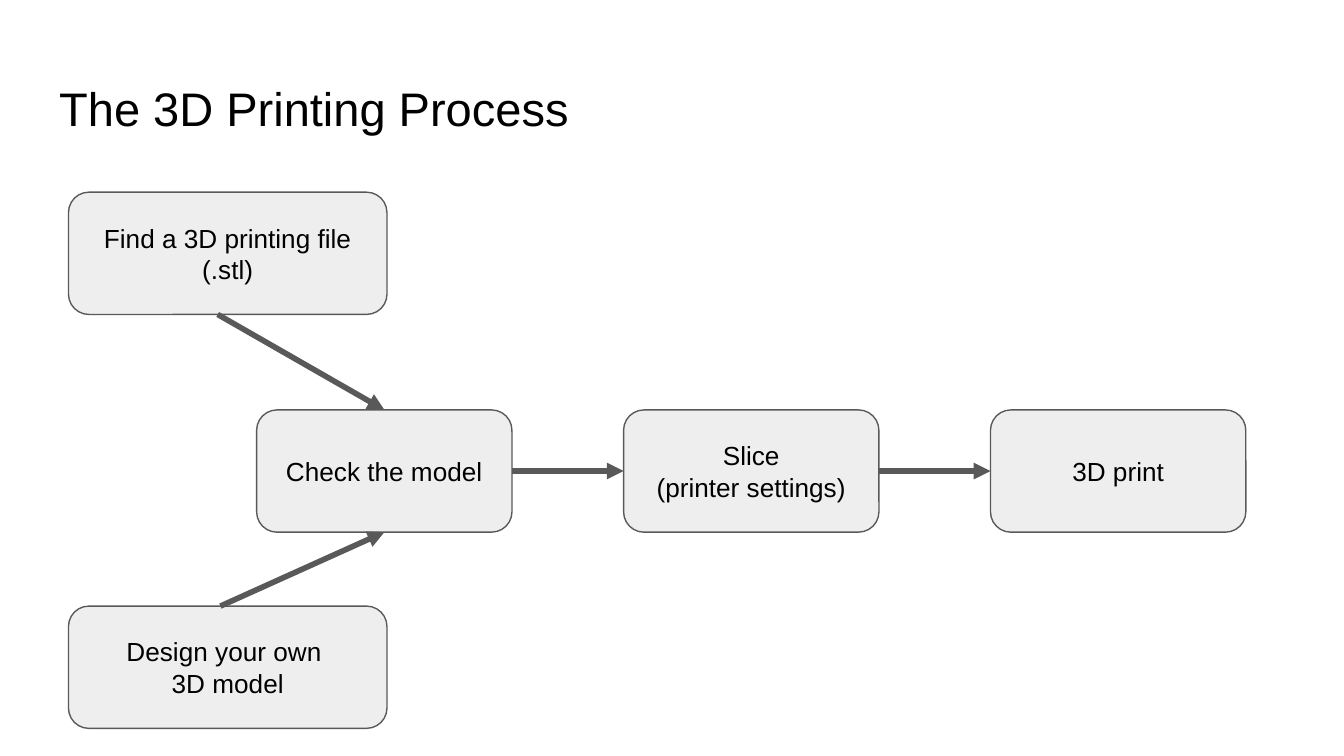
from lxml import etree
from pptx import Presentation
from pptx.dml.color import RGBColor
from pptx.enum import shapes, text
from pptx.oxml import ns
from pptx.util import Inches, Pt

BLACK = RGBColor(0x00, 0x00, 0x00)
LIGHT_GRAY = RGBColor(0xEE, 0xEE, 0xEE)
DARK_GRAY = RGBColor(0x59, 0x59, 0x59)

TITLE = "The 3D Printing Process"
# Ways to get a model: label, top of the box, start of its arrow, side of the first step
SOURCES = [
    ("Find a 3D printing file (.stl)", 1.43, (1.62, 2.34), 0),
    ("Design your own \v3D model", 4.51, (1.64, 4.51), 2),
]
STEPS = ["Check the model", "Slice\v(printer settings)", "3D print"]

SLIDE_WIDTH = 10
SLIDE_HEIGHT = SLIDE_WIDTH * 9 / 16
BOX_HEIGHT = 0.91
SOURCE_LEFT, SOURCE_WIDTH = 0.51, 2.37
STEP_LEFT, STEP_TOP, STEP_WIDTH, STEP_PITCH = 1.91, 3.05, 1.9, 2.73
LEFT, RIGHT = 1, 3


def write(frame, words, size, anchor, align):
    frame.text = words
    settings = {
        "word_wrap": True,
        "auto_size": text.MSO_AUTO_SIZE.NONE,
        "vertical_anchor": anchor,
    }
    for side in ("left", "top", "right", "bottom"):
        settings[f"margin_{side}"] = Inches(0.1)
    for name, value in settings.items():
        setattr(frame, name, value)
    paragraph = frame.paragraphs[0]
    paragraph.alignment = align
    for run in paragraph.runs:
        run.font.name = "Arial"
        run.font.size = Pt(size)
        run.font.color.rgb = BLACK


def add_box(slide, label, left, top, width):
    box = slide.shapes.add_shape(
        shapes.MSO_SHAPE.ROUNDED_RECTANGLE,
        Inches(left), Inches(top), Inches(width), Inches(BOX_HEIGHT))
    box.shadow.inherit = False
    box.fill.solid()
    box.fill.fore_color.rgb = LIGHT_GRAY
    box.line.color.rgb = DARK_GRAY
    box.line.width = Pt(0.75)
    write(box.text_frame, label, 14, text.MSO_ANCHOR.MIDDLE, text.PP_ALIGN.CENTER)
    return box


def add_arrow(slide, start, target, side):
    """Draw an arrow from a point to the middle of a side of the target box."""
    x, y = (Inches(value) for value in start)
    arrow = slide.shapes.add_connector(shapes.MSO_CONNECTOR.STRAIGHT, x, y, x, y)
    arrow.end_connect(target, side)
    arrow.line.color.rgb = DARK_GRAY
    arrow.line.width = Pt(3)
    properties = arrow._element.spPr
    etree.SubElement(properties.find(ns.qn("a:ln")), ns.qn("a:tailEnd"), type="triangle")
    etree.SubElement(properties, ns.qn("a:effectLst"))
    return arrow


def main():
    deck = Presentation()
    deck.slide_width, deck.slide_height = Inches(SLIDE_WIDTH), Inches(SLIDE_HEIGHT)
    slide = deck.slides.add_slide(deck.slide_layouts[5])

    title = slide.shapes.title
    title.left, title.top = Inches(0.34), Inches(0.49)
    title.width, title.height = Inches(9.32), Inches(0.63)
    write(title.text_frame, TITLE, 25.2, text.MSO_ANCHOR.TOP, text.PP_ALIGN.LEFT)

    for label, top, _, _ in SOURCES:
        add_box(slide, label, SOURCE_LEFT, top, SOURCE_WIDTH)
    steps = [
        add_box(slide, label, STEP_LEFT + i * STEP_PITCH, STEP_TOP, STEP_WIDTH)
        for i, label in enumerate(STEPS)
    ]

    for _, _, start, side in SOURCES:
        add_arrow(slide, start, steps[0], side)
    for step, following in zip(steps, steps[1:]):
        arrow = add_arrow(slide, (0, 0), following, LEFT)
        arrow.begin_connect(step, RIGHT)

    deck.save("out.pptx")


if __name__ == "__main__":
    main()
